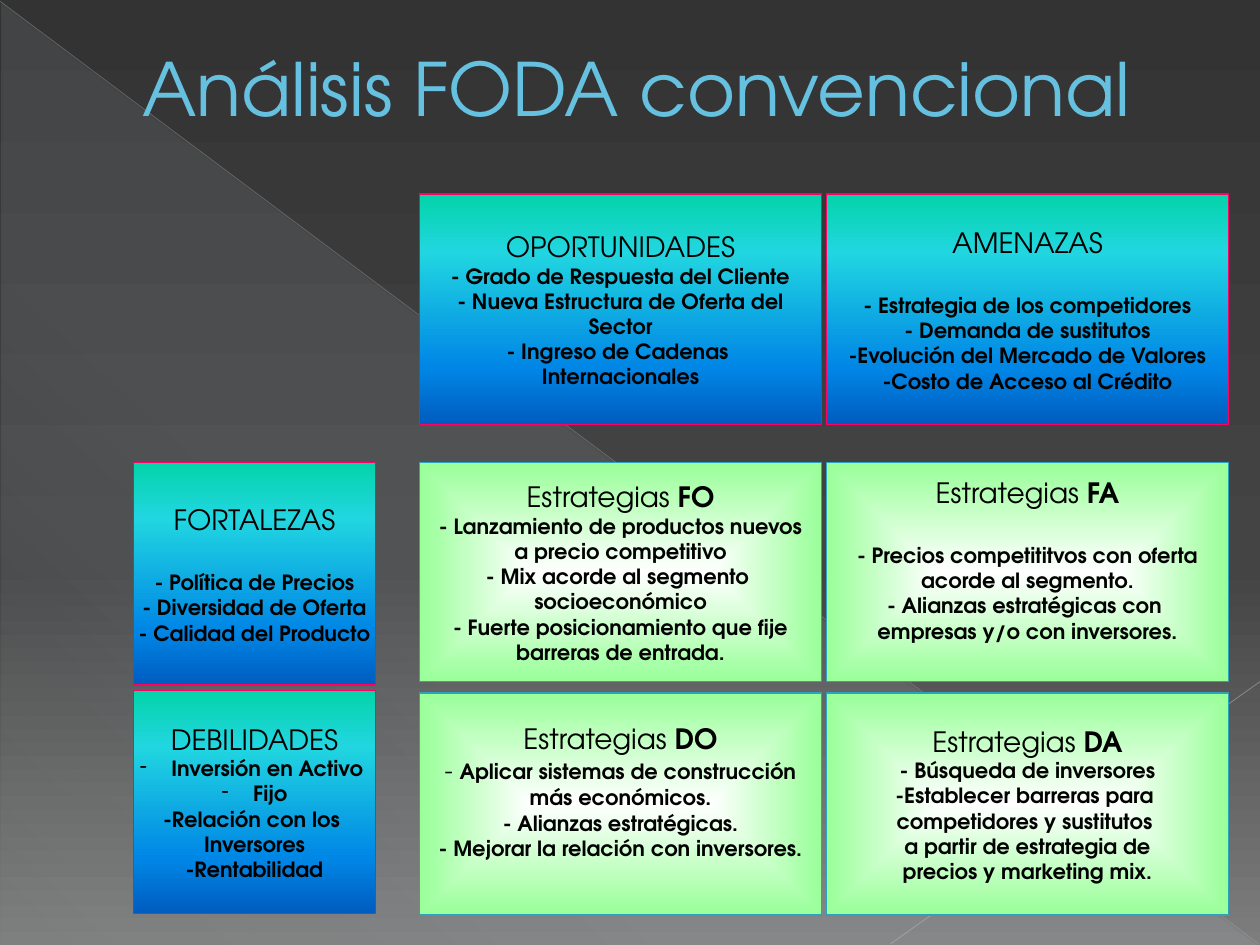
from lxml import etree
from pptx import Presentation, util as u
from pptx.dml.color import RGBColor
from pptx.enum import shapes, text
from pptx.oxml import ns

FONT = "TeX Gyre Adventor"
BLACK = RGBColor(0x00, 0x00, 0x00)
PINK = RGBColor(0xFF, 0x00, 0x66)
TEAL = RGBColor(0x2D, 0xA2, 0xBF)
SKY = RGBColor(0x66, 0xC0, 0xE0)
DEEP_TEAL = RGBColor(0x1F, 0x70, 0x84)
PALE = RGBColor(0xDE, 0xF5, 0xFA)
GREY = RGBColor(0xB9, 0xB9, 0xB9)
LIGHT_GREY = RGBColor(0xC1, 0xC1, 0xC1)

# Gradient stops: position, colour, opacity in percent
BACKDROP = [(0, RGBColor(0x33, 0x33, 0x33), 100), (60, RGBColor(0x44, 0x44, 0x44), 100),
            (100, RGBColor(0x7D, 0x7D, 0x7D), 100)]
GLOW = [(0, PALE, 10), (70, PALE, 8), (100, PALE, 1)]
OCEAN = [(0, RGBColor(0x03, 0xD4, 0xA8), 100), (25, RGBColor(0x21, 0xD6, 0xE0), 100),
         (75, RGBColor(0x00, 0x87, 0xE6), 100), (100, RGBColor(0x00, 0x5C, 0xBF), 100)]
MINT = [(0, RGBColor(0xFF, 0xFF, 0xFF), 100), (100, RGBColor(0x99, 0xFF, 0x99), 100)]


def add_xml(parent, tag, **attributes):
    values = {name: str(value) for name, value in attributes.items()}
    return etree.SubElement(parent, ns.qn(tag), values)


def add_color(parent, color, opacity=100):
    clr = add_xml(parent, "a:srgbClr", val=color)
    if opacity < 100:
        add_xml(clr, "a:alpha", val=opacity * 1000)


def set_gradient(owner, stops, angle=None):
    """Swap the solid fill for a linear gradient, or a centred one without an angle."""
    solid = owner.find(ns.qn("a:solidFill"))
    grad = etree.Element(ns.qn("a:gradFill"), rotWithShape="1")
    stop_list = add_xml(grad, "a:gsLst")
    for position, color, opacity in stops:
        add_color(add_xml(stop_list, "a:gs", pos=position * 1000), color, opacity)
    if angle is None:
        centre = add_xml(grad, "a:path", path="shape")
        add_xml(centre, "a:fillToRect", l=50000, t=50000, r=50000, b=50000)
    else:
        add_xml(grad, "a:lin", ang=angle * 60000, scaled=0)
    owner.replace(solid, grad)


class FodaSlide:
    heading = {"size": u.Pt(16), "bold": False}
    item = {"size": u.Pt(12), "bold": True}

    def __init__(self, slide):
        self.slide = slide

    def background(self, stops):
        self.slide.background.fill.solid()
        set_gradient(self.slide.element.find(".//" + ns.qn("p:bgPr")), stops, 90)

    def shape(self, kind, box, stops, angle=None):
        shape = self.slide.shapes.add_shape(kind, *map(u.Inches, box))
        shape.shadow.inherit = False
        shape.fill.solid()
        set_gradient(shape.element.spPr, stops, angle)
        return shape

    def line(self, start, end, color, width, opacity):
        line = self.slide.shapes.add_connector(
            shapes.MSO_CONNECTOR.STRAIGHT, *map(u.Inches, start + end))
        line.line.color.rgb = color
        line.line.width = u.Pt(width)
        clr = line.element.spPr.find(".//" + ns.qn("a:srgbClr"))
        add_xml(clr, "a:alpha", val=opacity * 1000)
        add_xml(line.element.spPr, "a:effectLst")

    def run(self, paragraph, words, color=BLACK, **style):
        run = paragraph.add_run()
        run.text = words
        run.font.color.rgb = color
        for name, value in {"name": FONT, **style}.items():
            setattr(run.font, name, value)
        return run

    def title(self, box, words):
        title = self.slide.shapes.add_textbox(*map(u.Inches, box))
        title.text_frame.word_wrap = True
        paragraph = title.text_frame.paragraphs[0]
        paragraph._p.get_or_add_pPr().set("marL", str(u.Inches(0.53)))
        run = self.run(paragraph, words, SKY, size=u.Pt(42))
        outline = etree.Element(ns.qn("a:ln"), w=str(u.Pt(0.5)))
        add_color(add_xml(outline, "a:solidFill"), DEEP_TEAL)
        run.font._element.insert(0, outline)

    def bullet(self, paragraph):
        props = paragraph._p.get_or_add_pPr()
        props.set("marL", str(u.Inches(0.25)))
        props.set("indent", str(-u.Inches(0.25)))
        add_xml(props, "a:buChar", char="-")

    def panel(self, box, heading, items, code="", bullets=0, gap=0, bottom=0.05):
        """A strategy panel (green) when it has a code, otherwise a factor panel (blue)."""
        stops, angle, edge = (MINT, None, TEAL) if code else (OCEAN, 90, PINK)
        panel = self.shape(shapes.MSO_SHAPE.RECTANGLE, box, stops, angle)
        panel.line.color.rgb = edge
        panel.line.width = u.Pt(1)
        frame = panel.text_frame
        layout = {"word_wrap": False, "vertical_anchor": text.MSO_ANCHOR.MIDDLE,
                  "margin_bottom": u.Inches(bottom)}
        for name, value in layout.items():
            setattr(frame, name, value)
        top = frame.paragraphs[0]
        top.space_after = u.Pt(gap)
        self.run(top, heading, **self.heading)
        if code:
            self.run(top, code, size=u.Pt(16), bold=True)
        for index, words in enumerate(items):
            paragraph = frame.add_paragraph()
            if index < bullets:
                self.bullet(paragraph)
            if isinstance(words, tuple):
                dash, words = words
                self.run(paragraph, dash, size=u.Pt(14), bold=False)
            self.run(paragraph, words, **self.item)
        for paragraph in frame.paragraphs:
            paragraph.alignment = text.PP_ALIGN.CENTER


def main():
    prs = Presentation()
    prs.slide_width, prs.slide_height = u.Inches(10), u.Inches(7.5)
    foda = FodaSlide(prs.slides.add_slide(prs.slide_layouts[6]))

    # Backdrop
    foda.background(BACKDROP)
    foda.shape(shapes.MSO_SHAPE.RIGHT_TRIANGLE, (0.01, 0.02, 9.98, 7.48),
               GLOW, 133).line.fill.background()
    foda.line((0, 0.01), (9.99, 7.49), GREY, 0.39, 35)
    foda.line((10, 5.41), (7.07, 7.49), LIGHT_GREY, 0.47, 45)

    # Matrix geometry: (left, width) of columns
    factors, first, second = (1.06, 1.92), (3.33, 3.19), (6.56, 3.19)

    def cell(column, top, height):
        return column[0], top, column[1], height

    blank_heading = 19.2  # one 16 pt line
    blank_item = 0.25     # bottom inset plus one 12 pt line

    # Opportunities and threats
    foda.panel(cell(first, 1.54, 1.83), "OPORTUNIDADES", [
        "- Grado de Respuesta del Cliente", "- Nueva Estructura de Oferta del",
        "Sector", "- Ingreso de Cadenas ", "Internacionales"])
    foda.panel(cell(second, 1.54, 1.83), "AMENAZAS", [
        "- Estrategia de los competidores", "- Demanda de sustitutos",
        "-Evolución del Mercado de Valores", "-Costo de Acceso al Crédito"],
        gap=blank_heading)

    # Strategies against weaknesses
    foda.panel(cell(first, 5.5, 1.76), "Estrategias ", [
        ("- ", "Aplicar sistemas de construcción"), "más económicos.",
        "- Alianzas estratégicas.", "- Mejorar la relación con inversores."],
        code="DO", bottom=blank_item)
    foda.panel(cell(second, 5.5, 1.76), "Estrategias ", [
        "- Búsqueda de inversores", "-Establecer barreras para ",
        "competidores y sustitutos ", "a partir de estrategia de",
        "precios y marketing mix."], code="DA")

    # Strategies from strengths
    foda.panel(cell(first, 3.67, 1.74), "Estrategias ", [
        "- Lanzamiento de productos nuevos", "a precio competitivo",
        "- Mix acorde al segmento ", "socioeconómico",
        "- Fuerte posicionamiento que fije", "barreras de entrada."], code="FO")
    foda.panel(cell(second, 3.67, 1.74), "Estrategias ", [
        "- Precios competititvos con oferta", "acorde al segmento.",
        "- Alianzas estratégicas con ", "empresas y/o con inversores."],
        code="FA", gap=blank_heading, bottom=blank_item)

    # Weaknesses and strengths
    foda.panel(cell(factors, 5.48, 1.77), "DEBILIDADES", [
        "Inversión en Activo ", "Fijo", "-Relación con los ", "Inversores",
        "-Rentabilidad"], bullets=2)
    foda.panel(cell(factors, 3.67, 1.77), "FORTALEZAS", [
        "- Política de Precios", "- Diversidad de Oferta",
        "- Calidad del Producto"], gap=blank_heading)

    # Title
    foda.title((0.5, 0.29, 9, 1.53), "Análisis FODA convencional")
    prs.save("out.pptx")


if __name__ == "__main__":
    main()
